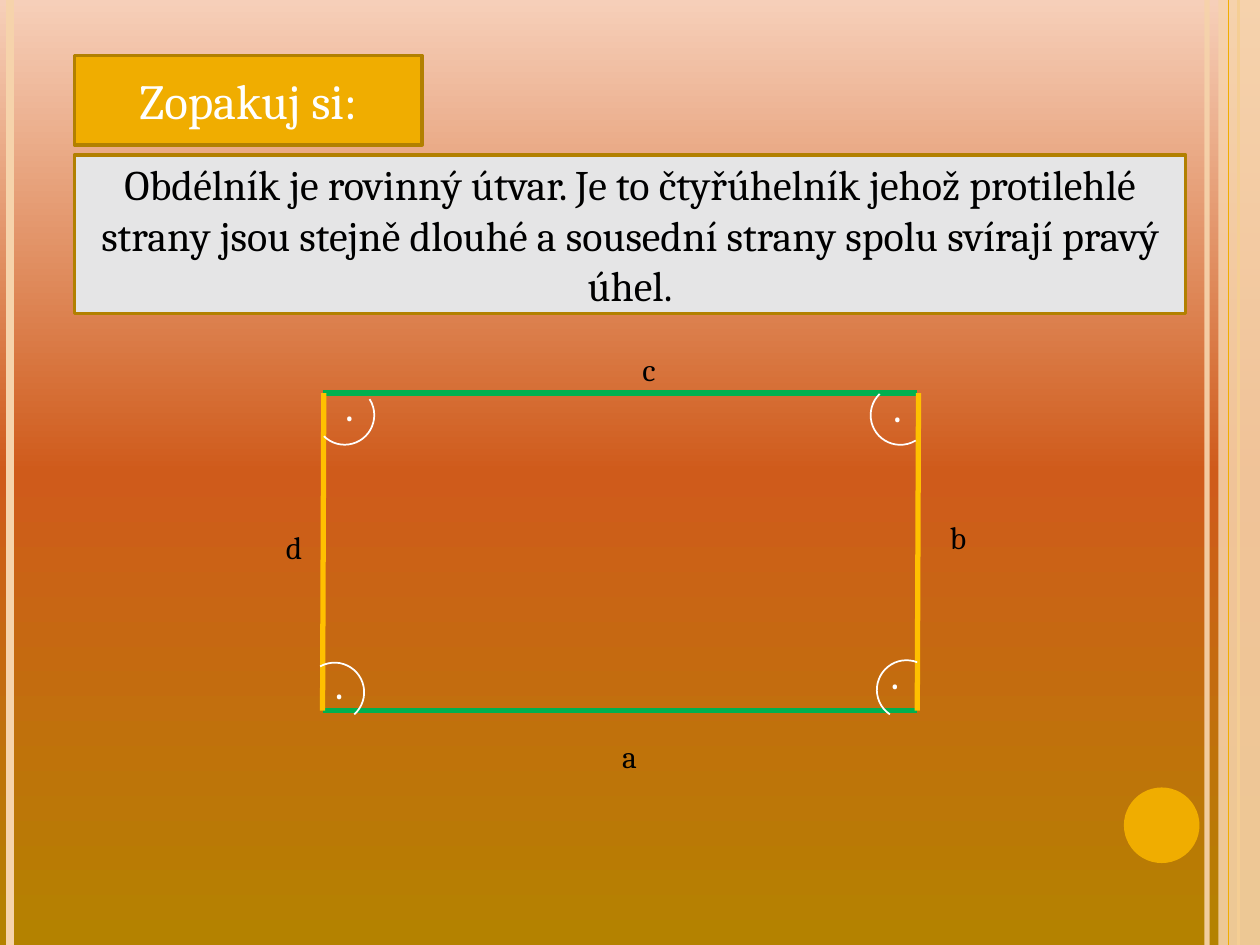
from copy import deepcopy

from pptx import Presentation
from pptx import util as u
from pptx.dml.color import RGBColor
from pptx.enum import shapes, text
from pptx.oxml import parse_xml
from pptx.oxml.ns import nsdecls, qn

In = u.Inches
GOLD, DARK_GOLD, SAND = "F0AD00", "B28000", "F6D3AB"
GREEN, YELLOW, GREY = "00B050", "FFC000", "E5E5E6"
BLACK, WHITE = "000000", "FFFFFF"


def rgb(value):
    return RGBColor.from_string(value)


def set_alpha(fill_parent, percent):
    """Make the solid colour inside an element partly opaque."""
    clr = fill_parent.find(".//" + qn("a:srgbClr"))
    clr.append(parse_xml(f'<a:alpha {nsdecls("a")} val="{percent * 1000}"/>'))


class SlideBuilder:
    font = "Cambria"

    def __init__(self, prs):
        self.s = prs.slides.add_slide(prs.slide_layouts[5])

    def background(self, stops):
        """Fill the slide from top to bottom with (position, colour) stops."""
        fill = self.s.background.fill
        fill.gradient()
        fill.gradient_angle = 270
        gs_list = self.s._element.find(".//" + qn("a:gsLst"))
        while len(gs_list) < len(stops):
            gs_list.append(deepcopy(gs_list[-1]))
        for stop, (position, color) in zip(fill.gradient_stops, stops):
            stop.position = position
            stop.color.rgb = rgb(color)

    def line(self, x1, y1, x2, y2, color, width, alpha=None):
        c = self.s.shapes.add_connector(
            shapes.MSO_CONNECTOR.STRAIGHT, In(x1), In(y1), In(x2), In(y2))
        c.line.color.rgb = rgb(color)
        c.line.width = u.Pt(width)
        c._element.spPr.append(parse_xml(f'<a:effectLst {nsdecls("a")}/>'))
        if alpha:
            set_alpha(c._element.spPr, alpha)

    def paint(self, sp, fill=None, line=None, width=2):
        if fill:
            sp.fill.solid()
            sp.fill.fore_color.rgb = rgb(fill)
        else:
            sp.fill.background()
        if line:
            sp.line.color.rgb = rgb(line)
            sp.line.width = u.Pt(width)
        else:
            sp.line.fill.background()

    def shape(self, kind, x, y, w, h, **style):
        sp = self.s.shapes.add_shape(kind, In(x), In(y), In(w), In(h))
        sp.shadow.inherit = False
        self.paint(sp, **style)
        return sp

    def set_text(self, sp, words, size, color, align=text.PP_ALIGN.LEFT):
        tf = sp.text_frame
        tf.word_wrap = True
        p = tf.paragraphs[0]
        p.text = words
        p.alignment = align
        p.font.name = self.font
        p.font.size = u.Pt(size)
        p.font.color.rgb = rgb(color)
        return tf

    def panel(self, sp, words, size, color):
        """Centre text in a box."""
        tf = self.set_text(sp, words, size, color, text.PP_ALIGN.CENTER)
        tf.vertical_anchor = text.MSO_ANCHOR.MIDDLE
        tf.auto_size = text.MSO_AUTO_SIZE.NONE

    def title(self, words, x, y, w, h):
        sp = self.s.shapes.title
        sp.left, sp.top, sp.width, sp.height = In(x), In(y), In(w), In(h)
        self.paint(sp, GOLD, DARK_GOLD)
        self.panel(sp, words, 28, WHITE)

    def label(self, words, x, y, w, h, size=18, color=BLACK):
        sp = self.s.shapes.add_textbox(In(x), In(y), In(w), In(h))
        tf = self.set_text(sp, words, size, color)
        tf.auto_size = text.MSO_AUTO_SIZE.SHAPE_TO_FIT_TEXT

    def angle_arc(self, x, y, rotation):
        sp = self.shape(shapes.MSO_SHAPE.ARC, x, y, 0.47, 0.47, line=WHITE, width=1)
        sp.adjustments[0] = 115.641
        sp.adjustments[1] = 0
        sp.rotation = rotation


def main():
    prs = Presentation()
    prs.slide_width, prs.slide_height = In(10), In(7.5)
    b = SlideBuilder(prs)
    b.background([(0, "F6CFB9"), (0.5, "CF5B1B"), (1, "B48200")])

    # Side decoration
    rect = shapes.MSO_SHAPE.RECTANGLE
    for x, color, width, alpha in [(9.58, SAND, 3, 93), (0.08, SAND, 4.5, None),
                                   (9.83, GOLD, 1.5, None)]:
        b.line(x, 0, x, 7.5, color, width, alpha)
    band = b.shape(rect, 9.67, 0, 0.33, 7.5, fill=SAND)
    set_alpha(band._element.spPr, 87)
    b.line(9.75, 0, 9.75, 7.5, GOLD, 0.75)
    b.shape(shapes.MSO_SHAPE.OVAL, 8.92, 6.25, 0.6, 0.6, fill=GOLD)

    b.title("Zopakuj si:", 0.59, 0.44, 2.76, 0.71)
    definition = b.shape(rect, 0.59, 1.23, 8.82, 1.26, fill=GREY, line=DARK_GOLD)
    b.panel(definition,
            "Obdélník je rovinný útvar. Je to čtyřúhelník jehož protilehlé strany "
            "jsou stejně dlouhé a sousední strany spolu svírají pravý úhel.",
            24, BLACK)

    # Rectangle sides
    left, right, top, bottom = 2.56, 7.28, 3.12, 5.64
    for y in (top, bottom):
        b.line(left, y, right, y, GREEN, 3)
    for x in (left, right):
        b.line(x + 0.01, top, x, bottom, YELLOW, 3)

    for name, x, y, w in [("b", 7.44, 4.06, 0.39), ("d", 2.17, 4.14, 0.31),
                          ("c", 5, 2.73, 0.31), ("a", 4.84, 5.8, 0.47)]:
        b.label(name, x, y, w, 0.4)

    # Right-angle marks
    for arc in [(2.42, 5.26, 48.2), (6.96, 5.24, 291.3),
                (2.5, 3.06, 134.6), (6.91, 3.06, 225.9)]:
        b.angle_arc(*arc)
    for x, y in [(6.99, 2.97), (6.97, 5.09), (2.56, 5.17), (2.64, 2.96)]:
        b.label(".", x, y, 0.39, 0.5, 24, WHITE)

    prs.save("out.pptx")


if __name__ == "__main__":
    main()
